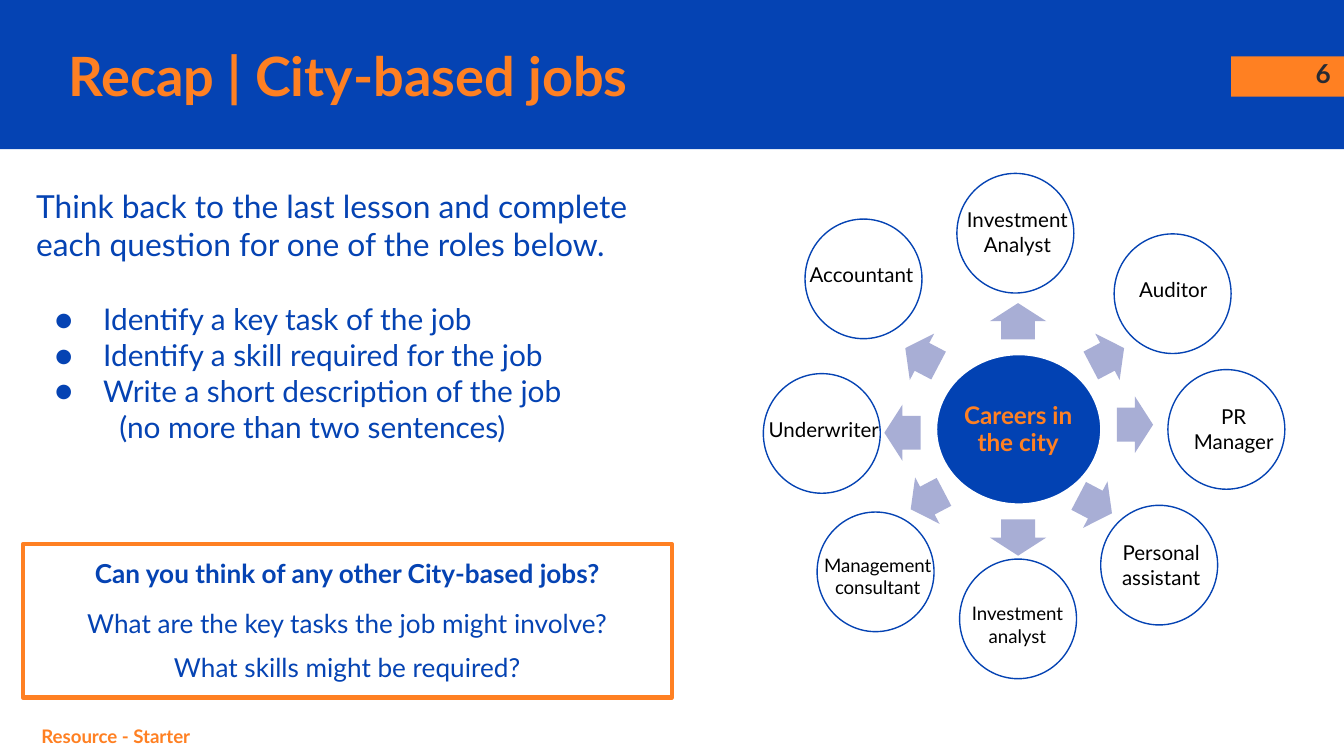
from lxml import etree
from pptx import Presentation
from pptx.dml.color import RGBColor
from pptx.enum.shapes import MSO_SHAPE
from pptx.enum.text import MSO_ANCHOR, PP_ALIGN
from pptx.oxml.ns import qn
from pptx.util import Inches, Pt

PX = 9144  # 100 px to the inch
FONT = "Lato"

BLUE = RGBColor(0x05, 0x43, 0xB3)
HUB_BLUE = RGBColor(0x02, 0x42, 0xB3)
ORANGE = RGBColor(0xFF, 0x80, 0x22)
LAVENDER = RGBColor(0xA8, 0xAE, 0xD5)
DARK = RGBColor(0x26, 0x2A, 0x33)
BLACK = RGBColor(0, 0, 0)
WHITE = RGBColor(0xFF, 0xFF, 0xFF)

RECTANGLE = MSO_SHAPE.RECTANGLE
ELLIPSE = MSO_SHAPE.OVAL
ARROW = MSO_SHAPE.RIGHT_ARROW
LEFT, CENTER, RIGHT = PP_ALIGN.LEFT, PP_ALIGN.CENTER, PP_ALIGN.RIGHT
TOP, MIDDLE = MSO_ANCHOR.TOP, MSO_ANCHOR.MIDDLE


def write(paragraph, text, size=16, color=BLUE, bold=False, align=LEFT,
          before=0, spacing=1.0, margin=0, indent=0, bullet=None):
    """Fill one paragraph with text in the given format."""
    properties = paragraph._p.get_or_add_pPr()
    properties.set("marL", str(margin * PX))
    properties.set("indent", str(indent * PX))
    paragraph.alignment = align
    paragraph.space_before = Pt(before)
    paragraph.line_spacing = spacing
    if bullet:
        bullet_color = etree.SubElement(properties, qn("a:buClr"))
        etree.SubElement(bullet_color, qn("a:srgbClr"), val=str(color))
        etree.SubElement(properties, qn("a:buFont"), typeface=FONT)
        etree.SubElement(properties, qn("a:buChar"), char=bullet)
    else:
        etree.SubElement(properties, qn("a:buNone"))
    run = paragraph.add_run()
    run.text = text
    run.font.name = FONT
    run.font.size = Pt(size)
    run.font.bold = bold
    run.font.color.rgb = color


class SlideBuilder:
    """Holds the current slide and draws each kind of element on it."""

    def __init__(self, slide):
        self.slide = slide

    def shape(self, kind, left, top, width, height, fill=None, line=None,
              line_width=0.75, rotation=0):
        shape = self.slide.shapes.add_shape(
            kind, left * PX, top * PX, width * PX, height * PX)
        shape.shadow.inherit = False
        shape.rotation = rotation
        if fill is None:
            shape.fill.background()
        else:
            shape.fill.solid()
            shape.fill.fore_color.rgb = fill
        if line is None:
            shape.line.fill.background()
        else:
            shape.line.color.rgb = line
            shape.line.width = Pt(line_width)
        return shape

    def fill_frame(self, frame, paragraphs, inset=10, anchor=TOP, **common):
        """Write (text, format) pairs; common format applies to all."""
        frame.word_wrap = True
        frame.vertical_anchor = anchor
        frame.margin_left = frame.margin_right = inset * PX
        frame.margin_top = frame.margin_bottom = inset * PX
        for index, (text, style) in enumerate(paragraphs):
            paragraph = frame.add_paragraph() if index else frame.paragraphs[0]
            write(paragraph, text, **{**common, **style})

    def text(self, left, top, width, height, paragraphs, **style):
        box = self.slide.shapes.add_textbox(
            left * PX, top * PX, width * PX, height * PX)
        if isinstance(paragraphs, str):
            paragraphs = [(paragraphs, {})]
        self.fill_frame(box.text_frame, paragraphs, **style)

    def title(self, left, top, width, height, text):
        title = self.slide.shapes.title
        # Bring the title in front of the header band
        self.slide.shapes[-1].element.addnext(title.element)
        title.left, title.top = left * PX, top * PX
        title.width, title.height = width * PX, height * PX
        self.fill_frame(title.text_frame, [(text, {})], anchor=MIDDLE,
                        size=29, color=ORANGE, bold=True)

    def arrow(self, left, top, width, height, rotation):
        arrow = self.shape(ARROW, left, top, width, height,
                           fill=LAVENDER, rotation=rotation)
        arrow.adjustments[0] = 0.6
        arrow.adjustments[1] = 0.5


def build_header(builder):
    builder.shape(RECTANGLE, 0, 0, 1000, 111, fill=BLUE)
    builder.shape(RECTANGLE, 916, 42, 84, 30, fill=ORANGE)
    builder.title(41, 28, 846, 56, "Recap | City-based jobs")
    builder.text(940, 33, 60, 43, "6", size=14, color=DARK, bold=True,
                 align=RIGHT)


def build_questions(builder):
    bullet = {"bullet": "●", "margin": 50, "indent": -36}
    builder.text(17, 129, 497, 214, [
        ("Think back to the last lesson and complete each question "
         "for one of the roles below.", {"size": 17}),
        ("Identify a key task of the job", {**bullet, "before": 20.4}),
        ("Identify a skill required for the job", bullet),
        ("Write a short description of the job", bullet),
        ("(no more than two sentences)", {"margin": 62}),
    ])
    box = builder.shape(RECTANGLE, 17, 405, 483, 114, line=ORANGE,
                        line_width=2.25)
    builder.fill_frame(box.text_frame, [
        ("Can you think of any other City-based jobs?", {"bold": True}),
        ("What are the key tasks the job might involve?", {"before": 9.6}),
        ("What skills might be required?", {"before": 7.2}),
    ], size=14, align=CENTER)


def build_careers_wheel(builder):
    # Hub
    builder.shape(ELLIPSE, 696, 263, 124, 113, fill=HUB_BLUE, line=WHITE,
                  line_width=2)
    builder.text(714, 280, 87, 80, "Careers in the city", inset=1,
                 anchor=MIDDLE, size=13, color=ORANGE, bold=True,
                 align=CENTER, spacing=0.9)

    # Arrows: left, top, rotation
    straight = [(744, 218, 270), (744, 379, 90), (831, 295, 0),
                (658, 301, 180)]
    diagonal = [(810, 246, 332.3), (801, 356, 27.7), (676, 353, 152.3),
                (672, 246, 207.7)]
    for (width, height), arrows in (((27, 42), straight),
                                    ((28, 39), diagonal)):
        for left, top, rotation in arrows:
            builder.arrow(left, top, width, height, rotation)

    # Jobs: name, circle left and top, label left, top, width, height, size
    jobs = [
        ("Investment Analyst", 712, 129, 707, 144, 100, 57, 11),
        ("Auditor", 829, 174, 823, 197, 100, 39, 11),
        ("PR Manager", 869, 275, 868, 291, 100, 57, 11),
        ("Personal assistant", 819, 376, 814, 392, 100, 57, 11),
        ("Investment analyst", 714, 416, 703, 438, 108, 54, 10),
        ("Management consultant", 608, 381, 599, 402, 108, 54, 10),
        ("Underwriter", 568, 278, 558, 301, 110, 39, 11),
        ("Accountant", 599, 163, 591, 186, 100, 39, 11),
    ]
    for name, circle_left, circle_top, left, top, width, height, size in jobs:
        builder.shape(ELLIPSE, circle_left, circle_top, 87, 89, line=BLUE)
        builder.text(left, top, width, height, name, size=size, color=BLACK,
                     align=CENTER)


def main():
    presentation = Presentation()
    presentation.slide_width = Inches(10)
    presentation.slide_height = Inches(5.625)  # 16:9
    title_only = presentation.slide_layouts[5]
    builder = SlideBuilder(presentation.slides.add_slide(title_only))

    build_header(builder)
    build_questions(builder)
    build_careers_wheel(builder)
    # Footer
    builder.text(21, 531, 816, 37, "Resource - Starter", size=10,
                 color=ORANGE, bold=True)

    presentation.save("out.pptx")


if __name__ == "__main__":
    main()
